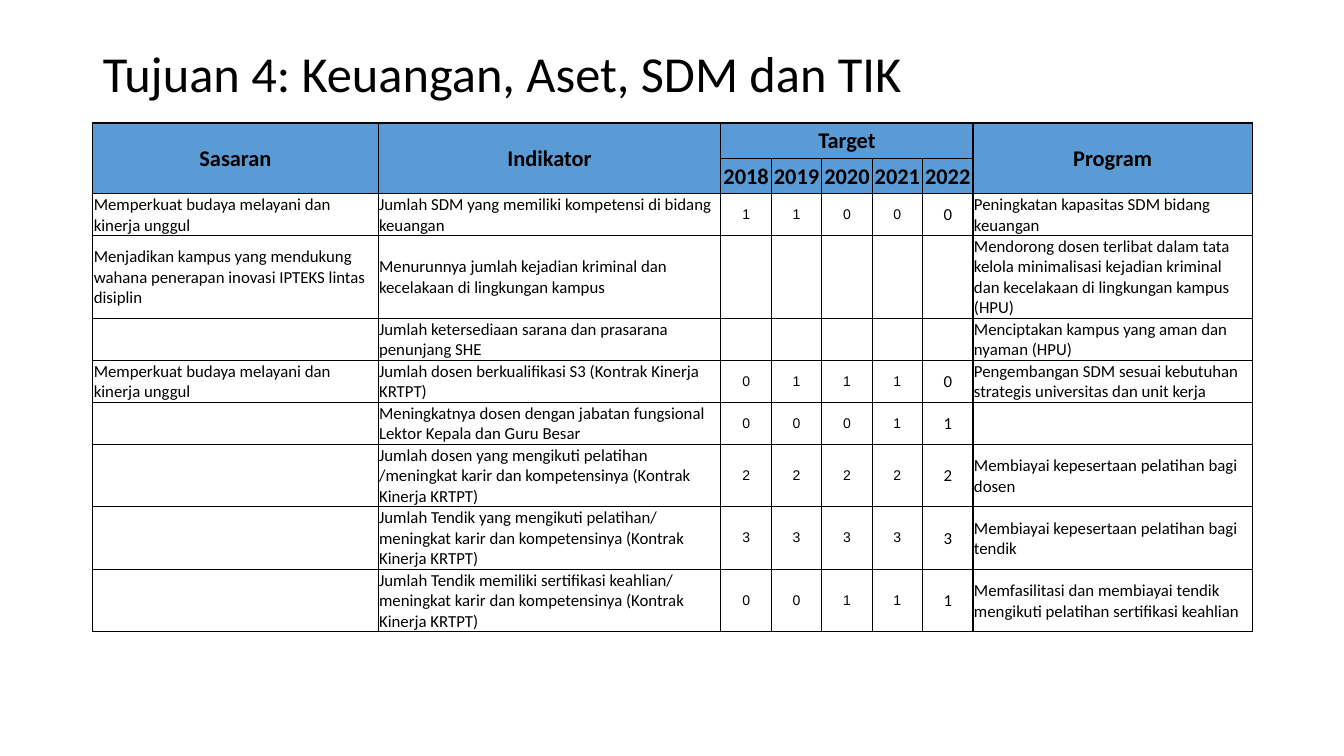
"""Build the slide of targets for finance, assets, staff and ICT."""
import lxml.etree
import pptx
import pptx.dml.color
import pptx.enum.text
import pptx.oxml
import pptx.oxml.ns
import pptx.util

Inches, Pt = pptx.util.Inches, pptx.util.Pt
PP_ALIGN, MSO_ANCHOR = pptx.enum.text.PP_ALIGN, pptx.enum.text.MSO_ANCHOR


def rgb(value):
    return pptx.dml.color.RGBColor.from_string(value)


def add_borders(cell, color, width):
    tcPr = cell._tc.get_or_add_tcPr()
    for side in ("lnL", "lnR", "lnT", "lnB"):
        ln = lxml.etree.SubElement(tcPr, pptx.oxml.ns.qn(f"a:{side}"), w=str(Pt(width)))
        fill = lxml.etree.SubElement(ln, pptx.oxml.ns.qn("a:solidFill"))
        lxml.etree.SubElement(fill, pptx.oxml.ns.qn("a:srgbClr"), val=color)


widths = [2.83, 3.4] + [0.5] * 5 + [2.77]
service = "Memperkuat budaya melayani dan kinerja unggul"
rows = [
    ["Sasaran", "Indikator", "Target", "", "", "", "", "Program"],
    ["", "", "2018", "2019", "2020", "2021", "2022", ""],
    [service, "Jumlah SDM yang memiliki kompetensi di bidang keuangan",
     *"11000", "Peningkatan kapasitas SDM bidang keuangan"],
    ["Menjadikan kampus yang mendukung wahana penerapan inovasi IPTEKS lintas disiplin",
     "Menurunnya jumlah kejadian kriminal dan kecelakaan di lingkungan kampus",
     *[""] * 5,
     "Mendorong dosen terlibat dalam tata kelola minimalisasi kejadian kriminal dan "
     "kecelakaan di lingkungan kampus (HPU)"],
    ["", "Jumlah ketersediaan sarana dan prasarana penunjang SHE",
     *[""] * 5, "Menciptakan kampus yang aman dan nyaman (HPU)"],
    [service, "Jumlah dosen berkualifikasi S3 (Kontrak Kinerja KRTPT)",
     *"01110", "Pengembangan SDM sesuai kebutuhan strategis universitas dan unit kerja"],
    ["", "Meningkatnya dosen dengan jabatan fungsional Lektor Kepala dan Guru Besar",
     *"00011", ""],
    ["", "Jumlah dosen yang mengikuti pelatihan /meningkat karir dan kompetensinya "
     "(Kontrak Kinerja KRTPT)",
     *"22222", "Membiayai kepesertaan pelatihan bagi dosen"],
    ["", "Jumlah Tendik yang mengikuti pelatihan/ meningkat karir dan kompetensinya "
     "(Kontrak Kinerja KRTPT)",
     *"33333", "Membiayai kepesertaan pelatihan bagi tendik"],
    ["", "Jumlah Tendik memiliki sertifikasi keahlian/ meningkat karir dan kompetensinya "
     "(Kontrak Kinerja KRTPT)",
     *"00111", "Memfasilitasi dan membiayai tendik mengikuti pelatihan sertifikasi keahlian"],
]

prs = pptx.Presentation()
prs.slide_width, prs.slide_height = Inches(13.33), Inches(7.5)
s = prs.slides.add_slide(prs.slide_layouts[5])

title = s.shapes.title
title.left, title.top, title.width, title.height = map(Inches, (0.92, 0.4, 11.5, 0.71))
tf = title.text_frame
tf.text = "Tujuan 4: Keuangan, Aset, SDM dan TIK"
tf.auto_size = pptx.enum.text.MSO_AUTO_SIZE.NONE
tf.vertical_anchor = MSO_ANCHOR.MIDDLE
p = tf.paragraphs[0]
p.alignment, p.line_spacing = PP_ALIGN.LEFT, 0.9
r = p.runs[0]
r.font.name, r.font.size, r.font.color.rgb = "Calibri", Pt(36), rgb("000000")

table = s.shapes.add_table(len(rows), len(widths), Inches(0.92), Inches(1.22),
                           Inches(11.5), Inches(0.35 * len(rows))).table
table.first_row = table.horz_banding = False
for column, width in zip(table.columns, widths):
    column.width = Inches(width)

for i, row in enumerate(rows):
    table.rows[i].height = Inches(0.35)
    for j, text in enumerate(row):
        cell = table.cell(i, j)
        header, year = i < 2, 2 <= j <= 6
        small = not header and 2 <= j <= 5
        add_borders(cell, "000000", 1)
        if header:
            cell.fill.solid()
            cell.fill.fore_color.rgb = rgb("5B9BD5")
        else:
            cell.fill.background()
        cell.vertical_anchor = MSO_ANCHOR.MIDDLE
        cell.margin_left = cell.margin_right = Inches(0.01)
        cell.margin_top = Inches(0.03 if small else 0.01)
        cell.margin_bottom = Inches(0.03 if small else 0)
        cell.text_frame.text = text
        p = cell.text_frame.paragraphs[0]
        p.alignment = PP_ALIGN.CENTER if header or year else PP_ALIGN.LEFT
        for r in p.runs:
            r.font.name = "Arial" if small else "Calibri"
            r.font.size = Pt(16 if header else 10 if small else 12)
            r.font.bold = header
            r.font.color.rgb = rgb("000000")

for j in (0, 1, 7):
    table.cell(0, j).merge(table.cell(1, j))
table.cell(0, 2).merge(table.cell(0, 6))

prs.save("out.pptx")
